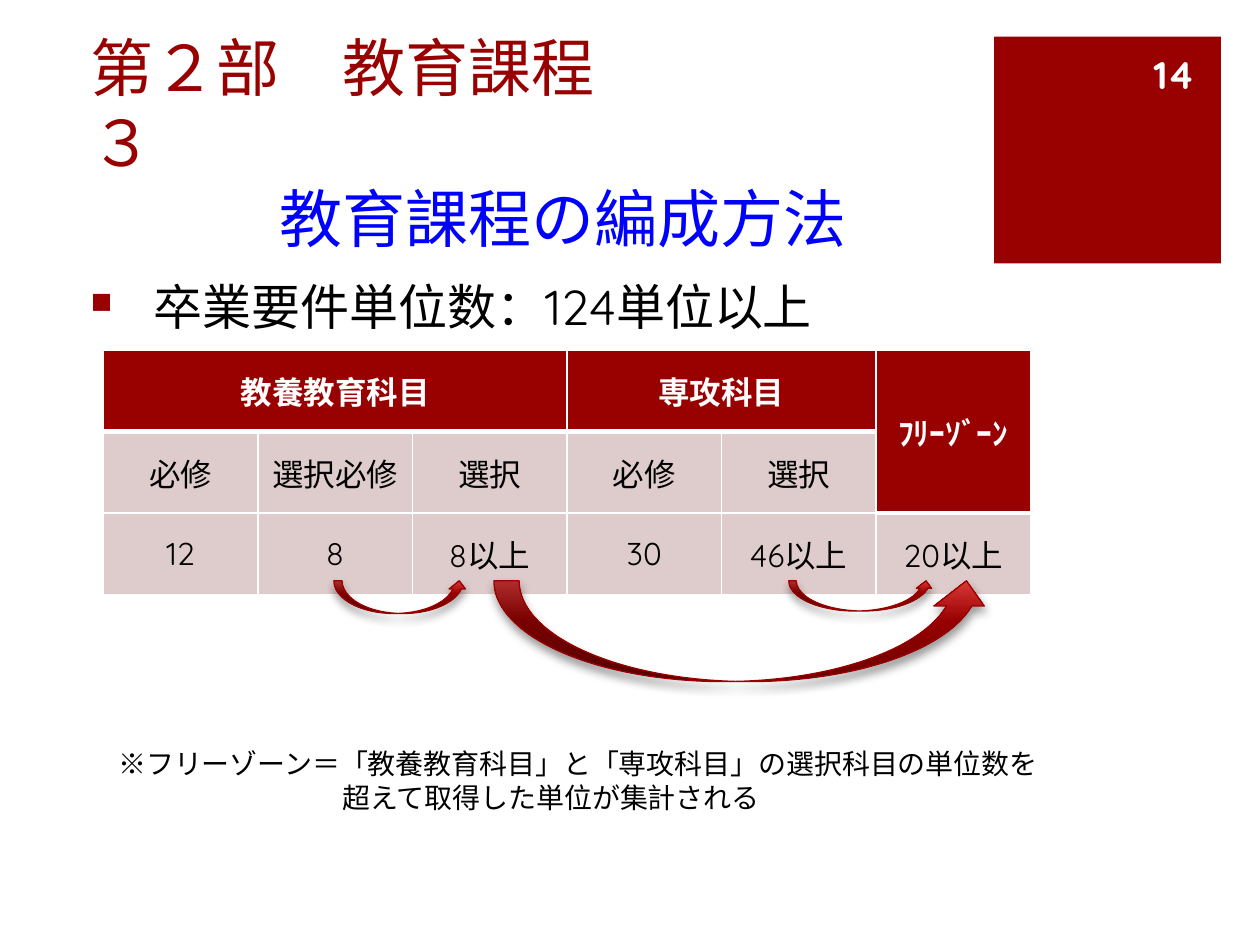
from dataclasses import dataclass
from lxml import etree
from pptx import Presentation, util as u
from pptx.dml.color import RGBColor
from pptx.enum import shapes, text
from pptx.oxml import parse_xml
from pptx.oxml.ns import qn

NS = 'xmlns:a="http://schemas.openxmlformats.org/drawingml/2006/main"'


@dataclass(frozen=True)
class Theme:
    font: str = "Quicksand"
    red: str = "990000"
    blue: str = "0000FF"
    black: str = "000000"
    white: str = "FFFFFF"
    label_row: str = "DECCCC"
    value_row: str = "DECBCB"
    gradient: tuple = ((0, "6C0000"), (60, "960000"), (100, "DC3838"))
    title: int = 36
    lead: int = 28
    number: int = 22
    cell: int = 18
    note: int = 16


class Deck:
    def __init__(self, theme, width, height):
        self.t = theme
        self.prs = Presentation()
        self.prs.slide_width, self.prs.slide_height = u.Inches(width), u.Inches(height)
        self.s = self.prs.slides.add_slide(self.prs.slide_layouts[6])

    def box(self, *at):
        return [u.Inches(v) for v in at]

    def run(self, p, words, size, color, bold=False):
        r = p.add_run()
        r.text = words
        f = r.font
        f.name, f.size, f.bold = self.t.font, u.Pt(size), bold
        f.color.rgb = RGBColor.from_string(color)

    def text(self, at, lines, size, anchor=text.MSO_ANCHOR.MIDDLE,
             align=text.PP_ALIGN.LEFT, bold=False, pitch=None):
        tf = self.s.shapes.add_textbox(*self.box(*at)).text_frame
        tf.word_wrap, tf.vertical_anchor = True, anchor
        for i, (words, color, indent) in enumerate(lines):
            p = tf.add_paragraph() if i else tf.paragraphs[0]
            p.alignment = align
            if pitch:
                p.line_spacing = u.Pt(pitch)
            p._p.get_or_add_pPr().set("marL", str(u.Inches(indent)))
            self.run(p, words, size, color, bold)
        return tf

    def bullet(self, at, words, hang):
        tf = self.text(at, [(words, self.t.black, hang)], self.t.lead)
        pPr = tf.paragraphs[0]._p.get_or_add_pPr()
        pPr.set("indent", str(-u.Inches(hang)))
        for xml in (f'<a:buClr {NS}><a:srgbClr val="{self.t.red}"/></a:buClr>',
                    f'<a:buSzPct {NS} val="60000"/>',
                    f'<a:buChar {NS} char="■"/>'):
            pPr.append(parse_xml(xml))

    def square(self, *at):
        sp = self.s.shapes.add_shape(shapes.MSO_SHAPE.RECTANGLE, *self.box(*at))
        sp.shadow.inherit = False
        sp.fill.solid()
        sp.fill.fore_color.rgb = RGBColor.from_string(self.t.red)
        sp.line.fill.background()

    def arrow(self, *at):
        sp = self.s.shapes.add_shape(shapes.MSO_SHAPE.CURVED_UP_ARROW, *self.box(*at))
        sp.line.color.rgb = RGBColor.from_string(self.t.red)
        sp.line.width = u.Pt(0.75)
        stops = "".join(f'<a:gs pos="{pos * 1000}"><a:srgbClr val="{c}"/></a:gs>'
                        for pos, c in self.t.gradient)
        spPr = sp._element.spPr
        spPr.find(qn("a:prstGeom")).addnext(parse_xml(
            f'<a:gradFill {NS} rotWithShape="1"><a:gsLst>{stops}</a:gsLst>'
            '<a:lin ang="16200000" scaled="0"/></a:gradFill>'))
        spPr.append(parse_xml(
            f'<a:effectLst {NS}><a:outerShdw blurRad="{u.Pt(5.2)}" dist="{u.Pt(3)}" '
            f'dir="5400000" rotWithShape="0"><a:srgbClr val="{self.t.black}">'
            '<a:alpha val="40000"/></a:srgbClr></a:outerShdw></a:effectLst>'))

    def borders(self, cell, top, bottom):
        tcPr = cell._tc.get_or_add_tcPr()
        for side, width in (("L", 1), ("R", 1), ("T", top), ("B", bottom)):
            ln = etree.SubElement(tcPr, qn(f"a:ln{side}"), w=str(u.Pt(width)))
            fill = etree.SubElement(ln, qn("a:solidFill"))
            etree.SubElement(fill, qn("a:srgbClr"), val=self.t.white)

    def table(self, at, rows, merges):
        n, m = len(rows), len(rows[0])
        tbl = self.s.shapes.add_table(n, m, *self.box(*at)).table
        for col in tbl.columns:
            col.width = u.Inches(at[2] / m)
        for row in tbl.rows:
            row.height = u.Inches(at[3] / n)
        header_end = [1 if row_label else 2 for row_label in rows[1]]
        row_fills = (self.t.red, self.t.label_row, self.t.value_row)
        for i, row in enumerate(rows):
            for j, words in enumerate(row):
                cell, head = tbl.cell(i, j), i < header_end[j]
                self.borders(cell, 3 if i == header_end[j] else 1, 3 if head else 1)
                cell.fill.solid()
                cell.fill.fore_color.rgb = RGBColor.from_string(
                    self.t.red if head else row_fills[i])
                cell.vertical_anchor = text.MSO_ANCHOR.MIDDLE
                if words:
                    p = cell.text_frame.paragraphs[0]
                    p.alignment = text.PP_ALIGN.CENTER
                    self.run(p, words, self.t.cell,
                             self.t.white if head else self.t.black, head)
        for start, end in merges:
            tbl.cell(*start).merge(tbl.cell(*end))


def main():
    t = Theme()
    d = Deck(t, 10, 7.5)
    d.square(7.89, 0.29, 1.8, 1.8)
    d.text((0.62, 0.62, 7.25, 1.45),
           [("第２部　教育課程", t.red, 0), ("３", t.red, 0), ("教育課程の編成方法", t.blue, 1.5)],
           t.title, anchor=text.MSO_ANCHOR.BOTTOM, pitch=43)
    d.bullet((0.62, 2.13, 8.12, 0.6), "卒業要件単位数：124単位以上", 0.5)
    d.text((0.62, 5.87, 8.12, 0.64),
           [("※フリーゾーン＝「教養教育科目」と「専攻科目」の選択科目の単位数を", t.black, 0.22),
            ("超えて取得した単位が集計される", t.black, 2)],
           t.note, pitch=19.4)
    d.text((9.03, 0.39, 0.55, 0.4), [("14", t.white, 0)], t.number,
           align=text.PP_ALIGN.RIGHT, bold=True)
    d.table((0.82, 2.78, 7.36, 1.94),
            [["教養教育科目", "", "", "専攻科目", "", "ﾌﾘｰｿﾞｰﾝ"],
             ["必修", "選択必修", "選択", "必修", "選択", ""],
             ["12", "8", "8以上", "30", "46以上", "20以上"]],
            [((0, 0), (0, 2)), ((0, 3), (0, 4)), ((0, 5), (1, 5))])
    for left, width, height in ((2.65, 1.06, 0.26), (3.92, 3.95, 0.8), (6.26, 1.15, 0.24)):
        d.arrow(left, 4.61, width, height)
    d.prs.save("out.pptx")


if __name__ == "__main__":
    main()
